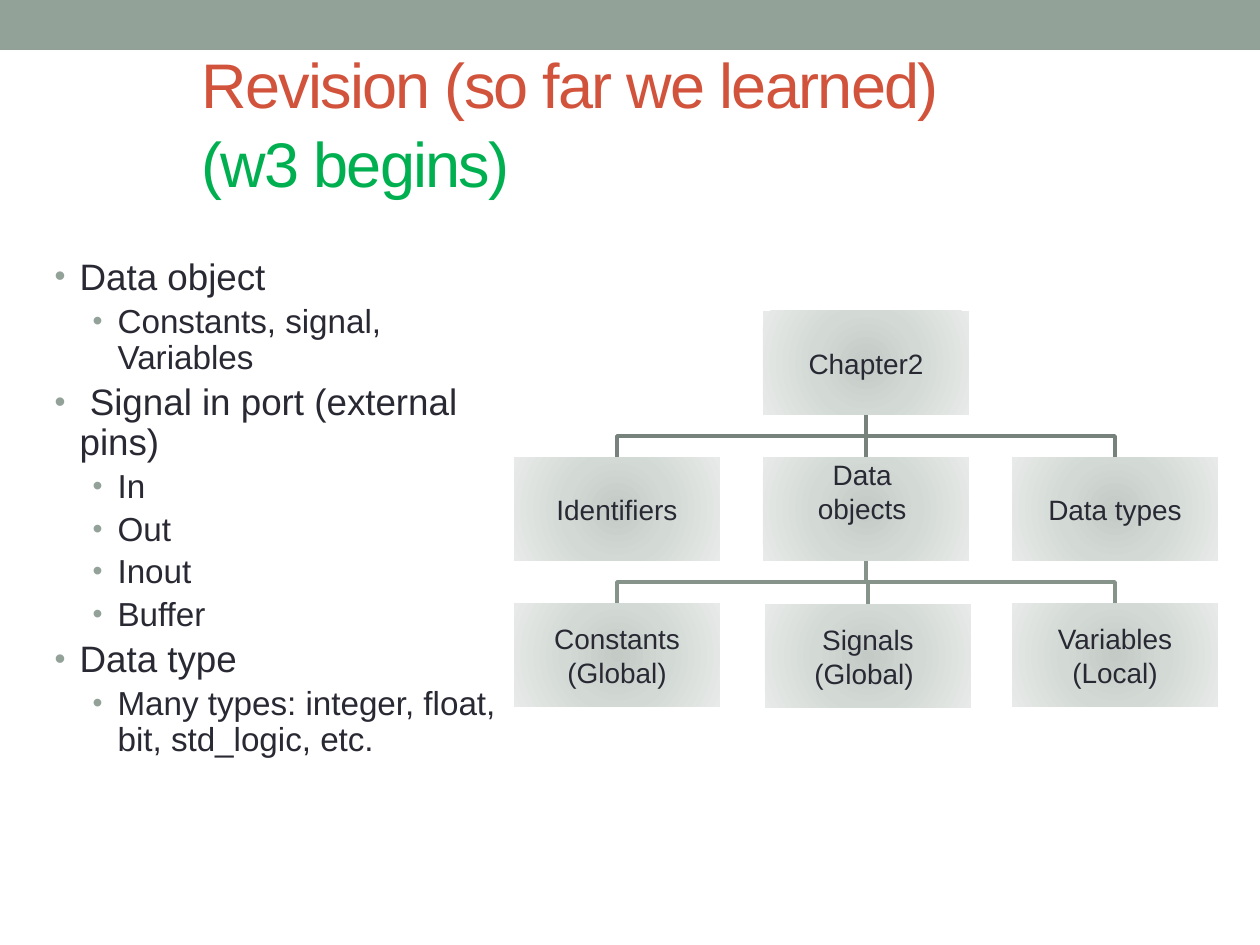
import lxml.etree
import pptx
import pptx.dml.color
import pptx.enum.shapes
import pptx.enum.text
import pptx.oxml.ns
import pptx.util

COLORS = {
    "band": "93A299", "title": "D2533C", "week": "00B050", "ink": "292934",
    "upper_link": "76827B", "lower_link": "85938B",
    "box_core": "C4CAC6", "box_middle": "D3DAD6", "box_rim": "E7EAE8",
}
FONT = "Arial"
BOX_WIDTH, BOX_HEIGHT = 206, 104
COLUMNS = [514 + 249 * i for i in range(3)]
ROWS = [311 + 146 * i for i in range(3)]
TOPICS = [
    (0, "Data object"), (1, "Constants, signal, Variables"),
    (0, " Signal in port (external pins)"),
    (1, "In"), (1, "Out"), (1, "Inout"), (1, "Buffer"),
    (0, "Data type"), (1, "Many types: integer, float, bit, std_logic, etc."),
]
CHAPTER = (COLUMNS[1], ROWS[0], ["Chapter2"])
SECTIONS = [
    (COLUMNS[0], ROWS[1], ["Identifiers"]),
    (COLUMNS[1], ROWS[1], ["Data ", "objects "]),
    (COLUMNS[2], ROWS[1], ["Data types"]),
]
OBJECTS = [
    (COLUMNS[0], ROWS[2], ["Constants", "(Global)"]),
    (COLUMNS[1] + 2, ROWS[2] + 1, ["Signals", "(Global) "]),
    (COLUMNS[2], ROWS[2], ["Variables", "(Local)"]),
]


def px(length):
    """Convert pixels to EMU."""
    return pptx.util.Emu(round(length * 914400 / 126))


def rgb(name):
    """Look up a named colour."""
    return pptx.dml.color.RGBColor.from_string(COLORS[name])


def add_xml(parent, tag, **attributes):
    """Append a DrawingML child element."""
    return lxml.etree.SubElement(parent, pptx.oxml.ns.qn(tag), attributes)


def place(shape, left, top, width, height):
    """Move and size a shape in pixels."""
    shape.left, shape.top = px(left), px(top)
    shape.width, shape.height = px(width), px(height)


def add_run(paragraph, text, size, color):
    """Add one formatted run."""
    run = paragraph.add_run()
    run.text = text
    run.font.name = FONT
    run.font.size = pptx.util.Pt(size)
    run.font.color.rgb = rgb(color)
    return run


def add_rectangle(slide, left, top, width, height):
    """Add a rectangle without line or shadow."""
    rectangle = slide.shapes.add_shape(
        pptx.enum.shapes.MSO_SHAPE.RECTANGLE,
        px(left), px(top), px(width), px(height))
    rectangle.shadow.inherit = False
    rectangle.line.fill.background()
    return rectangle


def add_band(slide):
    """Add the band across the top edge."""
    band = add_rectangle(slide, 0, 0, 1260, 50)
    band.fill.solid()
    band.fill.fore_color.rgb = rgb("band")


def fill_title(title):
    """Write the two-line heading."""
    place(title, 189, 42, 1008, 158)
    frame = title.text_frame
    frame.auto_size = pptx.enum.text.MSO_AUTO_SIZE.NONE
    frame.vertical_anchor = pptx.enum.text.MSO_ANCHOR.MIDDLE
    heading = frame.paragraphs[0]
    heading.alignment = pptx.enum.text.PP_ALIGN.LEFT
    heading.line_spacing = 1.05
    subject = add_run(heading, "Revision (so far we learned)", 36, "title")
    heading.add_line_break()
    line_break = heading._p.findall(pptx.oxml.ns.qn("a:br"))[0]
    add_xml(line_break, "a:rPr", sz="3600")
    week = add_run(heading, "(w3 begins)", 36, "week")
    for run in (subject, week):
        run.font._element.set("spc", "-100")


def add_bullet(paragraph, level):
    """Give a paragraph its indent and bullet."""
    properties = paragraph._p.get_or_add_pPr()
    properties.set("marL", str(px((25, 63)[level])))
    properties.set("indent", str(px(-25)))
    add_xml(add_xml(properties, "a:buClr"), "a:srgbClr", val=COLORS["band"])
    add_xml(properties, "a:buSzPct", val="85000")
    add_xml(properties, "a:buFont", typeface=FONT)
    add_xml(properties, "a:buChar", char="•")


def fill_topics(body):
    """Write the two-level list of topics."""
    place(body, 42, 252, 493, 567)
    frame = body.text_frame
    frame.auto_size = pptx.enum.text.MSO_AUTO_SIZE.NONE
    for index, (level, text) in enumerate(TOPICS):
        topic = frame.add_paragraph() if index else frame.paragraphs[0]
        size = (21, 19)[level]
        topic.level = level
        topic.line_spacing = 0.9
        topic.space_before = pptx.util.Pt(size * 0.2)
        add_bullet(topic, level)
        add_run(topic, text, size, "ink")


def add_link(slide, parent, child, color):
    """Join a parent box to a child box."""
    start_x, end_x = (box[0] + BOX_WIDTH // 2 for box in (parent, child))
    start_y, end_y = parent[1] + BOX_HEIGHT, child[1]
    if start_x == end_x:
        link = slide.shapes.add_connector(
            pptx.enum.shapes.MSO_CONNECTOR.STRAIGHT,
            px(start_x), px(start_y), px(end_x), px(end_y))
        add_xml(link._element.spPr, "a:effectLst")
    else:
        middle = (start_y + end_y) // 2
        outline = slide.shapes.build_freeform(px(start_x), px(start_y))
        outline.add_line_segments(
            [(px(start_x), px(middle)), (px(end_x), px(middle)),
             (px(end_x), px(end_y))], close=False)
        link = outline.convert_to_shape()
        link.fill.background()
        link.shadow.inherit = False
    link.line.color.rgb = rgb(color)
    link.line.width = pptx.util.Pt(2.08)


def fill_radial(box):
    """Fill a box with the radial gradient."""
    box.fill.gradient()
    gradient = box._element.spPr.find(pptx.oxml.ns.qn("a:gradFill"))
    for child in list(gradient):
        gradient.remove(child)
    stops = add_xml(gradient, "a:gsLst")
    for position, name in ((0, "box_core"), (45, "box_middle"), (100, "box_rim")):
        stop = add_xml(stops, "a:gs", pos=str(position * 1000))
        add_xml(stop, "a:srgbClr", val=COLORS[name])
    circle = add_xml(gradient, "a:path", path="circle")
    add_xml(circle, "a:fillToRect", l="100000", t="100000", r="100000", b="100000")


def add_box(slide, left, top, lines, anchor):
    """Add a labelled box of the tree."""
    box = add_rectangle(slide, left, top, BOX_WIDTH, BOX_HEIGHT)
    fill_radial(box)
    frame = box.text_frame
    frame.word_wrap = True
    frame.vertical_anchor = anchor
    frame.margin_left = frame.margin_right = px(1)
    frame.margin_top = frame.margin_bottom = px(1)
    for index, text in enumerate(lines):
        label = frame.add_paragraph() if index else frame.paragraphs[0]
        label.alignment = pptx.enum.text.PP_ALIGN.CENTER
        add_run(label, text, 16, "ink")


def add_tree(slide):
    """Draw the links and then the boxes."""
    data_objects = SECTIONS[1]
    for parent, children, color in (
            (CHAPTER, SECTIONS, "upper_link"),
            (data_objects, OBJECTS, "lower_link")):
        for child in children:
            add_link(slide, parent, child, color)
    anchors = pptx.enum.text.MSO_ANCHOR
    for box in [CHAPTER, *SECTIONS, *OBJECTS]:
        anchor = anchors.TOP if box is data_objects else anchors.MIDDLE
        add_box(slide, *box, anchor)


def main():
    """Build and save the revision slide."""
    deck = pptx.Presentation()
    deck.slide_width, deck.slide_height = px(1260), px(945)
    slide = deck.slides.add_slide(deck.slide_layouts[1])
    add_band(slide)
    fill_title(slide.shapes.title)
    fill_topics(slide.placeholders[1])
    add_tree(slide)
    deck.save("out.pptx")


if __name__ == "__main__":
    main()
